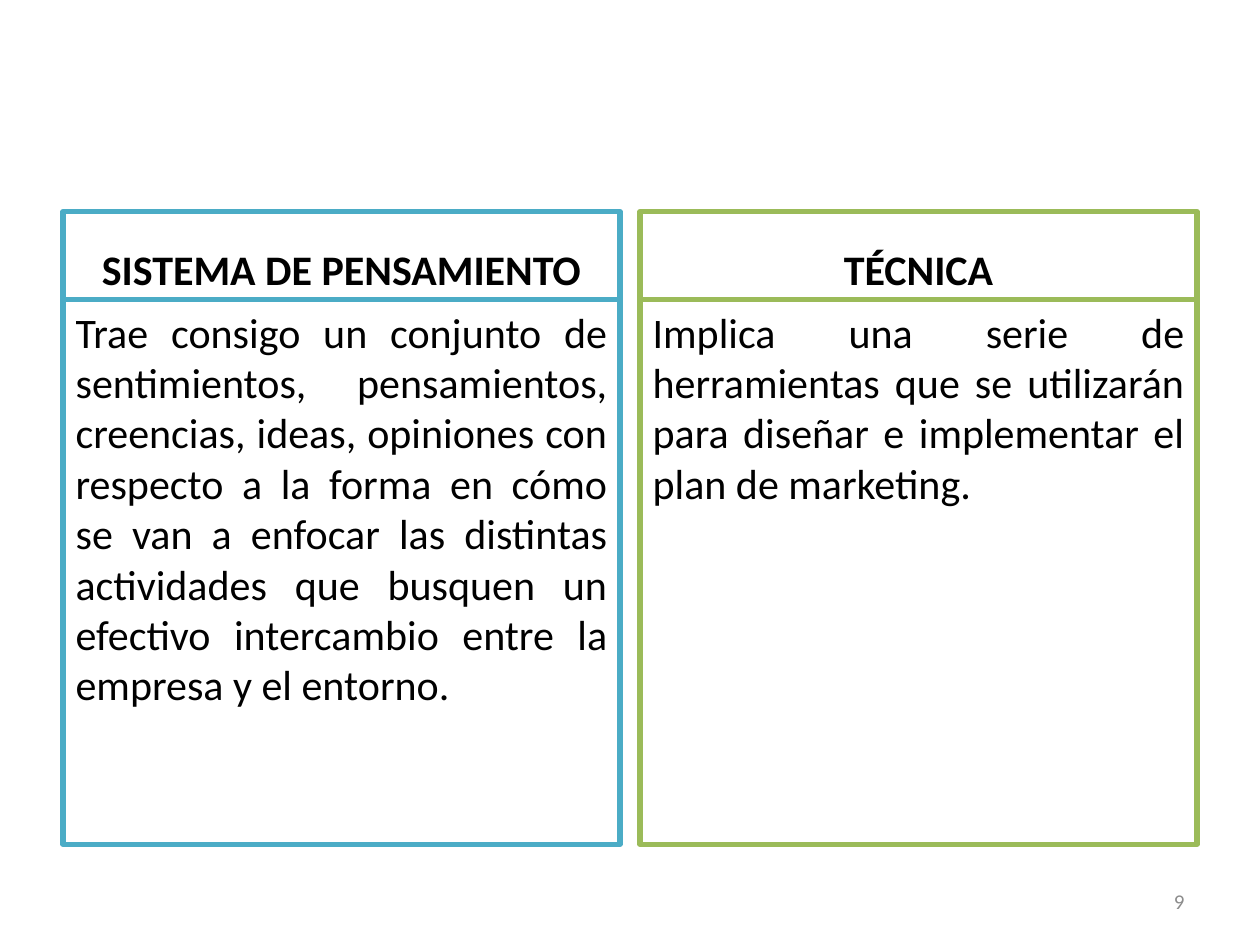
"""Build a slide comparing marketing as a system of thought and as a technique."""
from lxml.etree import SubElement
from pptx import Presentation
from pptx.dml.color import RGBColor
from pptx.enum.text import MSO_ANCHOR, MSO_AUTO_SIZE, PP_ALIGN
from pptx.oxml.ns import qn
from pptx.util import Inches, Pt

COLORS = {"white": "FFFFFF", "black": "000000", "gray": "8C8C8C",
          "blue": "4BACC6", "green": "9BBB59"}
LEFT, TOP, WIDTH, GAP = 0.5, 1.68, 4.42, 0.16
HEADING_HEIGHT, BODY_HEIGHT = 0.7, 4.32

COLUMNS = [
    ("blue", "SISTEMA DE PENSAMIENTO",
     "Trae consigo un conjunto de sentimientos, pensamientos, creencias, ideas, "
     "opiniones con respecto a la forma en cómo se van a enfocar las distintas "
     "actividades que busquen un efectivo intercambio entre la empresa y el entorno."),
    ("green", "TÉCNICA",
     "Implica una serie de herramientas que se utilizarán para diseñar e "
     "implementar el plan de marketing."),
]


def write(box, text, size, color, align, anchor, bold=False):
    frame = box.text_frame
    frame.text = text
    frame.word_wrap = True
    frame.auto_size = MSO_AUTO_SIZE.NONE
    frame.vertical_anchor = anchor
    paragraph = frame.paragraphs[0]
    paragraph.alignment = align
    paragraph.space_before = Pt(0)
    properties = paragraph._p.get_or_add_pPr()
    properties.set("marL", "0")
    properties.set("indent", "0")
    SubElement(properties, qn("a:buNone"))
    font = paragraph.runs[0].font
    font.name = "Calibri"
    font.size = Pt(size)
    font.bold = bold
    font.color.rgb = RGBColor.from_string(COLORS[color])


def place(panel, left, top, height, outline):
    panel.left, panel.top = Inches(left), Inches(top)
    panel.width, panel.height = Inches(WIDTH), Inches(height)
    panel.fill.solid()
    panel.fill.fore_color.rgb = RGBColor.from_string(COLORS["white"])
    panel.line.color.rgb = RGBColor.from_string(COLORS[outline])
    panel.line.width = Pt(3)


prs = Presentation()
prs.slide_width, prs.slide_height = Inches(10), Inches(7.5)
comparison_layout = prs.slide_layouts[4]
slide = prs.slides.add_slide(comparison_layout)
empty_title = slide.shapes.title._element
empty_title.getparent().remove(empty_title)

for column, (outline, heading_text, body_text) in enumerate(COLUMNS):
    left = LEFT + column * (WIDTH + GAP)
    heading = slide.placeholders[2 * column + 1]
    body = slide.placeholders[2 * column + 2]
    place(heading, left, TOP, HEADING_HEIGHT, outline)
    place(body, left, TOP + HEADING_HEIGHT, BODY_HEIGHT, outline)
    write(heading, heading_text, 24, "black", PP_ALIGN.CENTER, MSO_ANCHOR.BOTTOM, True)
    write(body, body_text, 24, "black", PP_ALIGN.JUSTIFY, MSO_ANCHOR.TOP)

page_number = slide.shapes.add_textbox(Inches(7.17), Inches(6.95), Inches(2.33), Inches(0.4))
write(page_number, "9", 12, "gray", PP_ALIGN.RIGHT, MSO_ANCHOR.MIDDLE)

prs.save("out.pptx")
